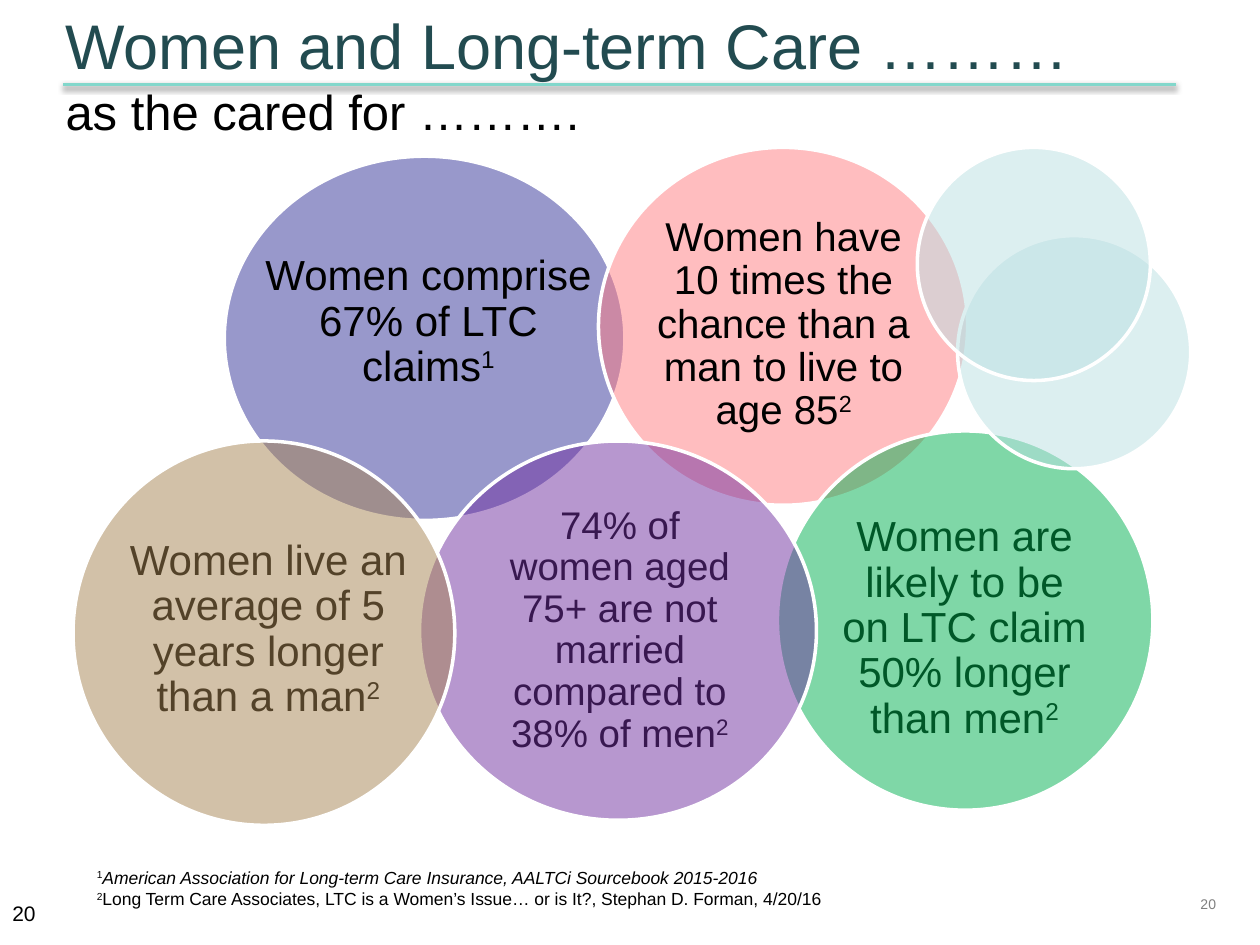
from dataclasses import dataclass

from lxml.etree import SubElement
from pptx import Presentation
from pptx.dml.color import RGBColor
from pptx.enum.shapes import MSO_CONNECTOR, MSO_SHAPE
from pptx.enum.text import MSO_ANCHOR, PP_ALIGN
from pptx.oxml.ns import qn
from pptx.util import Inches, Pt

COLUMNS, ROWS = 100, 75
SMALL_BUBBLE = 18.5


@dataclass(frozen=True)
class Theme:
    font: str = "Arial"
    ink: str = "000000"
    heading: str = "224B50"
    rule: str = "82D7CB"
    muted: str = "808080"
    outline: str = "FFFFFF"
    indigo: str = "333399"
    coral: str = "FF7C80"
    green: str = "00B050"
    aqua: str = "BBE0E3"
    purple: str = "7030A0"
    tan: str = "A78553"
    title_size: int = 36
    subtitle_size: int = 28
    fact_size: int = 24
    page_size: int = 12
    source_size: int = 10
    footer_size: int = 8
    line_width: int = 2
    bubble_alpha: int = 50


class SlideBuilder:
    def __init__(self, deck, theme):
        self.theme = theme
        self.column = deck.slide_width / COLUMNS
        self.row = deck.slide_height / ROWS
        self.slide = deck.slides.add_slide(deck.slide_layouts[5])

    def place(self, left, top, width, height):
        """Turn grid columns and rows into slide lengths."""
        return (round(left * self.column), round(top * self.row),
                round(width * self.column), round(height * self.row))

    def style(self, run, size, color=None, italic=None):
        run.font.name = self.theme.font
        run.font.size = Pt(size)
        run.font.italic = italic
        run.font.color.rgb = RGBColor.from_string(color or self.theme.ink)

    def title(self, area, heading, subtitle):
        title = self.slide.shapes.title
        title.left, title.top, title.width, title.height = self.place(*area)
        frame = title.text_frame
        frame.text = f"{heading}\v{subtitle}"
        frame.vertical_anchor = MSO_ANCHOR.TOP
        paragraph = frame.paragraphs[0]
        paragraph.alignment = PP_ALIGN.LEFT
        heading_run, subtitle_run = paragraph.runs
        self.style(heading_run, self.theme.title_size, self.theme.heading)
        self.style(subtitle_run, self.theme.subtitle_size)
        line_break = paragraph._p.find(qn("a:br"))
        SubElement(line_break, qn("a:rPr"), sz=str(self.theme.title_size * 100))

    def rule(self, left, right, row):
        x, y, width, _ = self.place(left, row, right - left, 0)
        rule = self.slide.shapes.add_connector(
            MSO_CONNECTOR.STRAIGHT, x, y, x + width, y)
        rule.line.color.rgb = RGBColor.from_string(self.theme.rule)
        rule.line.width = Pt(self.theme.line_width)
        effects = SubElement(rule._element.spPr, qn("a:effectLst"))
        shadow = SubElement(effects, qn("a:outerShdw"), blurRad=str(Pt(3.1)),
                            dist=str(Pt(1.6)), dir="5400000", rotWithShape="0")
        shade = SubElement(shadow, qn("a:srgbClr"), val=self.theme.ink)
        SubElement(shade, qn("a:alpha"), val="38000")

    def bubble(self, area, color):
        bubble = self.slide.shapes.add_shape(MSO_SHAPE.OVAL, *self.place(*area))
        bubble.shadow.inherit = False
        bubble.fill.solid()
        bubble.fill.fore_color.rgb = RGBColor.from_string(color)
        fill_color = bubble._element.spPr.find(qn("a:solidFill"))[0]
        SubElement(fill_color, qn("a:alpha"),
                   val=str(self.theme.bubble_alpha * 1000))
        bubble.line.color.rgb = RGBColor.from_string(self.theme.outline)
        bubble.line.width = Pt(self.theme.line_width)

    def text_frame(self, area):
        frame = self.slide.shapes.add_textbox(*self.place(*area)).text_frame
        frame.word_wrap = True
        return frame

    def note_mark(self, paragraph, mark, size):
        run = paragraph.add_run()
        run.text = mark
        self.style(run, size)
        run._r.get_or_add_rPr().set("baseline", "30000")

    def fact(self, area, wording, mark, size=None):
        size = size or self.theme.fact_size
        frame = self.text_frame(area)
        frame.margin_left = frame.margin_right = 0
        frame.margin_top = frame.margin_bottom = 0
        frame.vertical_anchor = MSO_ANCHOR.MIDDLE
        paragraph = frame.paragraphs[0]
        paragraph.text = wording
        paragraph.alignment = PP_ALIGN.CENTER
        paragraph.line_spacing = 0.9
        self.style(paragraph.runs[0], size)
        self.note_mark(paragraph, mark, size)

    def sources(self, area, entries):
        frame = self.text_frame(area)
        size = self.theme.source_size
        for number, (citation, italic) in enumerate(entries, start=1):
            paragraph = frame.paragraphs[0] if number == 1 else frame.add_paragraph()
            self.note_mark(paragraph, str(number), size)
            run = paragraph.add_run()
            run.text = citation
            self.style(run, size, italic=italic)

    def page_number(self, area, number, size, color):
        frame = self.text_frame(area)
        frame.text = number
        self.style(frame.paragraphs[0].runs[0], size, color)
        return frame


def main():
    deck = Presentation()
    deck.slide_width, deck.slide_height = Inches(10), Inches(7.5)
    theme = Theme()
    page = SlideBuilder(deck, theme)

    footer = page.page_number((92.5, 70, 5, 3.5), "20",
                              theme.footer_size, theme.muted)
    footer.margin_left = 0
    footer.vertical_anchor = MSO_ANCHOR.MIDDLE
    footer.paragraphs[0].alignment = PP_ALIGN.RIGHT

    page.title((4.2, 0, 85, 12.5),
               "Women and Long-term Care ………", "as the cared for ……….")
    page.rule(5, 93.3, 6.7)
    page.sources((6.7, 68.3, 62.5, 4.4), [
        ("American Association for Long-term Care Insurance, "
         "AALTCi Sourcebook 2015-2016", True),
        ("Long Term Care Associates, LTC is a Women’s Issue… or is It?, "
         "Stephan D. Forman, 4/20/16", False),
    ])

    # Stacking order matters: some facts lie beneath their translucent bubble.
    page.bubble((17.8, 12.4, 31.8, 28.9), theme.indigo)
    page.fact((66.7, 40.8, 19.7, 18.2),
              "Women are likely to be on LTC claim 50% longer than men", "2")
    page.bubble((47.5, 11.7, 29.3, 28.4), theme.coral)
    page.fact((39.2, 40, 20, 20.1),
              "74% of women aged 75+ are not married compared to 38% of men",
              "2", theme.fact_size - 2)
    page.bubble((61.7, 34.2, 29.8, 30.1), theme.green)
    page.bubble((76, 18.7, SMALL_BUBBLE, SMALL_BUBBLE), theme.aqua)
    page.bubble((33.3, 35, 31.5, 30.1), theme.purple)
    page.fact((51.6, 14.8, 21.2, 22),
              "Women have 10 times the chance than a man to live to age 85",
              "2", theme.fact_size - 1)
    page.bubble((72.8, 11.7, SMALL_BUBBLE, SMALL_BUBBLE), theme.aqua)
    page.fact((10, 41.7, 22.6, 16.6),
              "Women live an average of 5 years longer than a man", "2")
    page.bubble((5.8, 35, 30.3, 30.5), theme.tan)
    page.fact((20.9, 18.7, 26.2, 13.8), "Women comprise 67% of LTC claims", "1")

    page.page_number((0, 71, 6.7, 4), "20", theme.page_size, theme.ink)
    deck.save("out.pptx")


if __name__ == "__main__":
    main()
